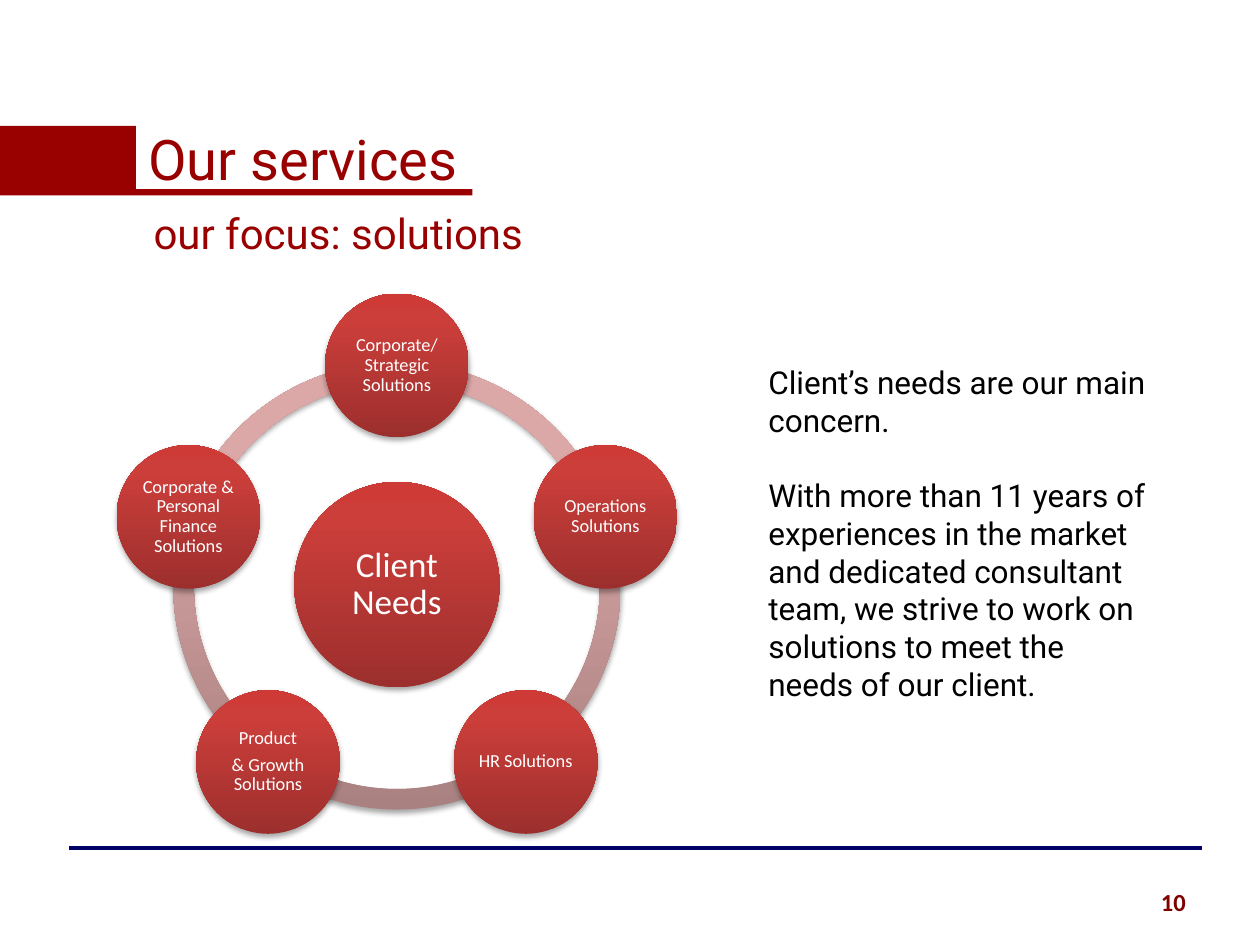
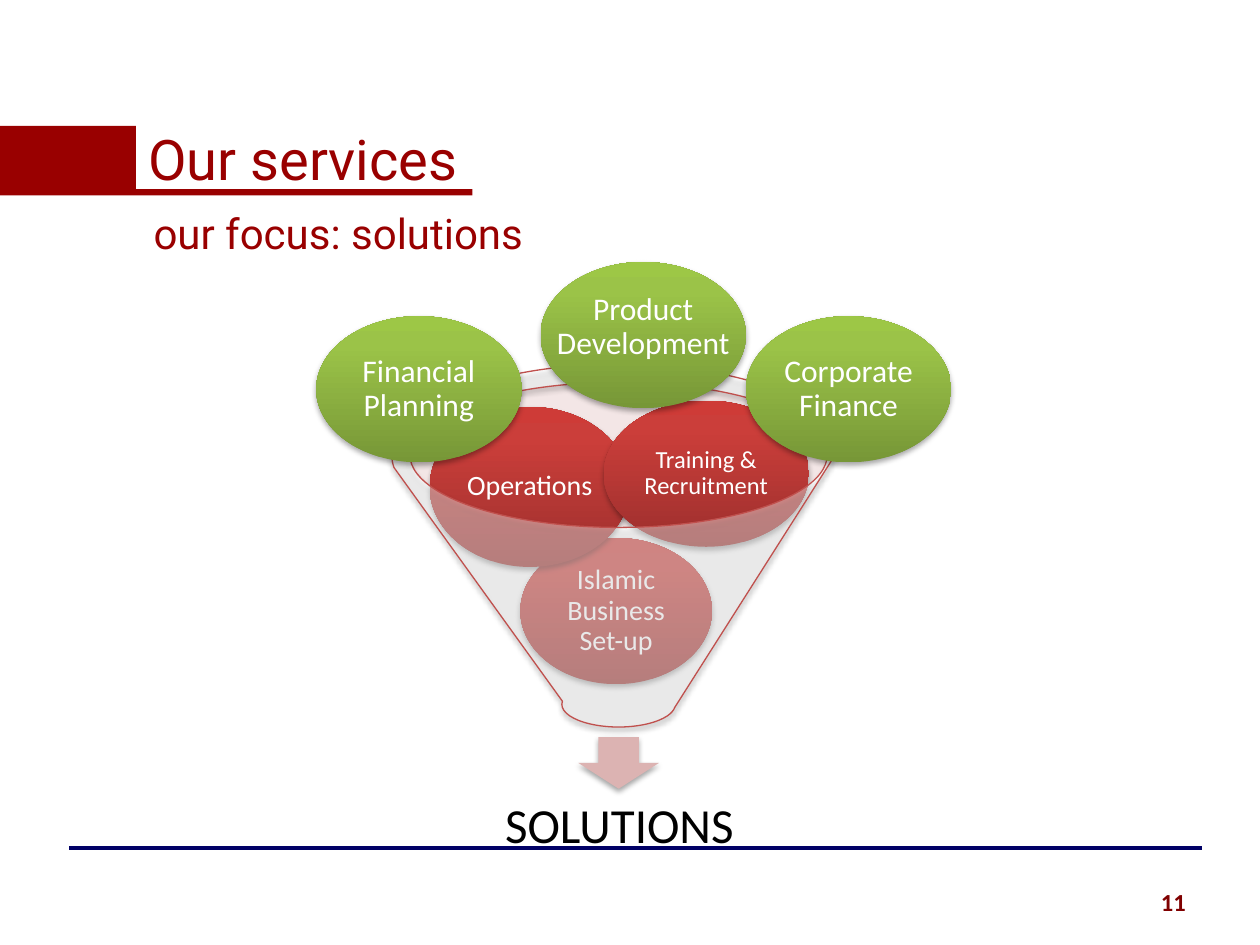
from collections import namedtuple
from math import cos, radians, sin

from lxml import etree
from pptx import Presentation
from pptx.dml.color import RGBColor
from pptx.enum.shapes import MSO_CONNECTOR, MSO_SHAPE
from pptx.enum.text import MSO_ANCHOR, PP_ALIGN
from pptx.oxml.ns import qn
from pptx.util import Inches, Pt

Box = namedtuple("Box", "left top width height")

RECTANGLE = MSO_SHAPE.RECTANGLE
OVAL = MSO_SHAPE.OVAL
BLOCK_ARC = MSO_SHAPE.BLOCK_ARC
DOWN_ARROW = MSO_SHAPE.DOWN_ARROW
FUNNEL = MSO_SHAPE.FUNNEL
STRAIGHT = MSO_CONNECTOR.STRAIGHT
LEFT, CENTER, RIGHT = PP_ALIGN.LEFT, PP_ALIGN.CENTER, PP_ALIGN.RIGHT
TOP, MIDDLE = MSO_ANCHOR.TOP, MSO_ANCHOR.MIDDLE

HEADING_FONT = "Roboto"
LABEL_FONT = "Calibri"
CRIMSON = "990000"
NUMBER_RED = "800000"
NAVY = "000066"
BLACK = "000000"
WHITE = "FFFFFF"
RED_GRADIENT = ((0, "9C2F2D"), (80, "CB3E3A"), (100, "CE3B37"))
GREEN_GRADIENT = ((0, "779737"), (80, "9BC348"), (100, "9DC746"))
RING_GRADIENT = ((0, "A98180"), (80, "DBA7A7"), (100, "DDA7A6"))


def color(hex_string):
    """Turn a hex string into a colour."""
    return RGBColor.from_string(hex_string)


def inside(box, left, top, width, height):
    """Return a box whose offsets are measured from another box."""
    return Box(box.left + left, box.top + top, width, height)


def fill_gradient(shape, stops):
    """Fill a shape with a gradient that runs from bottom to top."""
    shape.fill.gradient()
    shape.fill.gradient_angle = 90
    stop_list = shape._element.spPr.find(qn("a:gradFill")).find(qn("a:gsLst"))
    for old_stop in list(stop_list):
        stop_list.remove(old_stop)
    for percent, hex_string in stops:
        stop = etree.SubElement(stop_list, qn("a:gs"), pos=str(percent * 1000))
        etree.SubElement(stop, qn("a:srgbClr"), val=hex_string)


def fill_solid(shape, hex_string, opacity=100):
    """Fill a shape with one colour, see-through if asked."""
    shape.fill.solid()
    shape.fill.fore_color.rgb = color(hex_string)
    if opacity < 100:
        fill_color = shape._element.spPr.find(qn("a:solidFill"))[0]
        etree.SubElement(fill_color, qn("a:alpha"), val=str(opacity * 1000))


def add_soft_shadow(shape):
    """Give a shape a soft shadow straight below it."""
    effects = shape._element.spPr.find(qn("a:effectLst"))
    shadow = etree.SubElement(effects, qn("a:outerShdw"), blurRad="40000", dist="23000",
                              dir="5400000", rotWithShape="0")
    shadow_color = etree.SubElement(shadow, qn("a:srgbClr"), val=BLACK)
    etree.SubElement(shadow_color, qn("a:alpha"), val="35000")


def add_shape(slide, kind, box, fill, opacity=100, shadow=True):
    """Add a preset shape without outline; fill is a colour or gradient stops."""
    shape = slide.shapes.add_shape(kind, *map(Inches, box))
    shape.line.fill.background()
    shape.shadow.inherit = False
    if isinstance(fill, str):
        fill_solid(shape, fill, opacity)
    else:
        fill_gradient(shape, fill)
    if shadow:
        add_soft_shadow(shape)
    return shape


def write_text(shape, paragraphs, size, hex_string, font=LABEL_FONT, bold=False,
               align=LEFT, anchor=TOP, inset=None, line_spacing=None, space_before=0):
    """Write paragraphs into a shape in one style."""
    frame = shape.text_frame
    frame.word_wrap = True
    frame.vertical_anchor = anchor
    if inset is not None:
        frame.margin_left = frame.margin_right = Inches(inset)
        frame.margin_top = frame.margin_bottom = Inches(inset)
    for index, text in enumerate(paragraphs):
        paragraph = frame.add_paragraph() if index else frame.paragraphs[0]
        paragraph.alignment = align
        if line_spacing:
            paragraph.line_spacing = line_spacing
        if index:
            paragraph.space_before = Pt(space_before)
        run = paragraph.add_run()
        run.text = text
        run.font.name = font
        run.font.size = Pt(size)
        run.font.bold = bold
        run.font.color.rgb = color(hex_string)


def add_text(slide, box, paragraphs, size, hex_string, **style):
    """Add a text box with paragraphs in one style."""
    text_box = slide.shapes.add_textbox(*map(Inches, box))
    write_text(text_box, paragraphs, size, hex_string, **style)


def write_label(shape, paragraphs, size, inset=0.02):
    """Write a centred white label inside a shape."""
    write_text(shape, paragraphs, size, WHITE, align=CENTER, anchor=MIDDLE,
               inset=inset, line_spacing=0.9, space_before=size * 0.35)


def draw_header(slide, box):
    """Draw the title, its red flag and rule, and the subtitle."""
    add_text(slide, inside(box, 1.33, 0, 3, 0.64), ["Our services"], 32, CRIMSON,
             font=HEADING_FONT)
    add_shape(slide, RECTANGLE, inside(box, 0, 0.06, 1.33, 0.5), CRIMSON, shadow=False)
    add_shape(slide, RECTANGLE, inside(box, 0, 0.56, 4, 0.05), CRIMSON, shadow=False)
    add_text(slide, inside(box, 1.37, 0.66, 3.88, 0.5), ["our focus: solutions"], 24,
             CRIMSON, font=HEADING_FONT)


def draw_footer(slide, box, number):
    """Draw the footer rule and the slide number."""
    line = slide.shapes.add_connector(STRAIGHT, Inches(box.left), Inches(box.top),
                                      Inches(box.left + box.width), Inches(box.top))
    line.line.color.rgb = color(NAVY)
    line.line.width = Pt(2.25)
    etree.SubElement(line._element.spPr, qn("a:effectLst"))
    add_text(slide, inside(box, 6.63, 0.26, 2.33, 0.35), [str(number)], 14, NUMBER_RED,
             bold=True, align=RIGHT)


def draw_wheel(slide, box, hub_label, labels):
    """Draw a hub with evenly spaced circles joined by a ring."""
    hub, ring, circle, orbit = 1.63, 3.55, 1.14, 1.74
    center_x = box.width / 2
    center_y = circle / 2 + orbit
    step = 360 / len(labels)

    def square(x, y, side):
        """Return a square box around a point of the wheel."""
        return inside(box, x - side / 2, y - side / 2, side, side)

    for index in range(len(labels)):
        start = (198 - index * step) % 360
        arc = add_shape(slide, BLOCK_ARC, square(center_x, center_y + 0.01, ring),
                        RING_GRADIENT)
        arc.adjustments[0] = start * 0.6
        arc.adjustments[1] = (start + step) % 360 * 0.6
        arc.adjustments[2] = 0.046

    hub_shape = add_shape(slide, OVAL, square(center_x, center_y, hub), RED_GRADIENT)
    write_label(hub_shape, [hub_label], 20, inset=0.03)
    for index, paragraphs in enumerate(labels):
        angle = radians(index * step - 90)
        spot = square(center_x + orbit * cos(angle), center_y + orbit * sin(angle), circle)
        write_label(add_shape(slide, OVAL, spot, RED_GRADIENT), paragraphs, 10.5)


def draw_funnel(slide, box):
    """Draw services that drop into a funnel and come out as solutions."""
    add_shape(slide, OVAL, inside(box, 0.73, 0.95, 3.32, 1.15), "E2C2C2", opacity=40,
              shadow=False)
    add_shape(slide, DOWN_ARROW, inside(box, 2.08, 3.77, 0.64, 0.41), "DCB3B2")
    add_text(slide, inside(box, 0.86, 4.1, 3.09, 0.77), ["SOLUTIONS"], 28, BLACK,
             align=CENTER, anchor=MIDDLE, inset=0.22, line_spacing=0.9)

    services_inside = (
        ("Islamic Business Set-up", 16, (1.62, 2.19, 1.52, 1.16)),
        ("Operations", 16, (0.9, 1.15, 1.59, 1.27)),
        ("Training & Recruitment", 14, (2.28, 1.1, 1.63, 1.16)),
    )
    for label, size, place in services_inside:
        write_label(add_shape(slide, OVAL, inside(box, *place), RED_GRADIENT), [label], size)

    funnel = add_shape(slide, FUNNEL, inside(box, 0.6, 0.81, 3.6, 2.88), WHITE, opacity=40)
    funnel.line.color.rgb = color("C0504D")
    funnel.line.width = Pt(0.75)

    for label, left in (("Corporate Finance", 3.41), ("Financial Planning", 0)):
        oval = add_shape(slide, OVAL, inside(box, left, 0.43, 1.63, 1.16), GREEN_GRADIENT)
        write_label(oval, [label], 18)
    add_shape(slide, OVAL, inside(box, 1.78, 0, 1.63, 1.16), GREEN_GRADIENT)
    add_text(slide, inside(box, 1.84, 0.11, 1.51, 0.82), ["Product Development"], 18, WHITE,
             align=CENTER, anchor=MIDDLE, inset=0.02, line_spacing=0.9)


def add_services_slide(presentation, number):
    """Add a blank slide with the shared header and footer."""
    slide = presentation.slides.add_slide(presentation.slide_layouts[6])
    draw_footer(slide, Box(0.55, 6.73, 8.99, 0.61), number)
    draw_header(slide, Box(-0.25, 0.94, 5.25, 1.16))
    return slide


def build_client_needs(presentation):
    """Build the slide with the client at the centre of the services."""
    slide = add_services_slide(presentation, 10)
    draw_wheel(slide, Box(0.93, 2.33, 4.44, 4.28), "Client Needs", (
        ["Corporate/Strategic Solutions"],
        ["Operations Solutions"],
        ["HR Solutions"],
        ["Product", "& Growth Solutions"],
        ["Corporate & Personal Finance Solutions"],
    ))
    add_text(slide, Box(6, 2.83, 3.2, 2.83), [
        "Client’s needs are our main concern.",
        "With more than 11 years of experiences in the market and dedicated consultant "
        "team, we strive to work on solutions to meet the needs of our client.",
    ], 18, BLACK, font=HEADING_FONT, space_before=21.5)


def build_solutions_funnel(presentation):
    """Build the slide with the funnel of services."""
    slide = add_services_slide(presentation, 11)
    draw_funnel(slide, Box(2.51, 2.08, 5.04, 4.87))


def main():
    """Build and save the presentation."""
    presentation = Presentation()
    presentation.slide_width = Inches(10)
    presentation.slide_height = Inches(7.5)
    build_client_needs(presentation)
    build_solutions_funnel(presentation)
    presentation.save("out.pptx")


if __name__ == "__main__":
    main()
